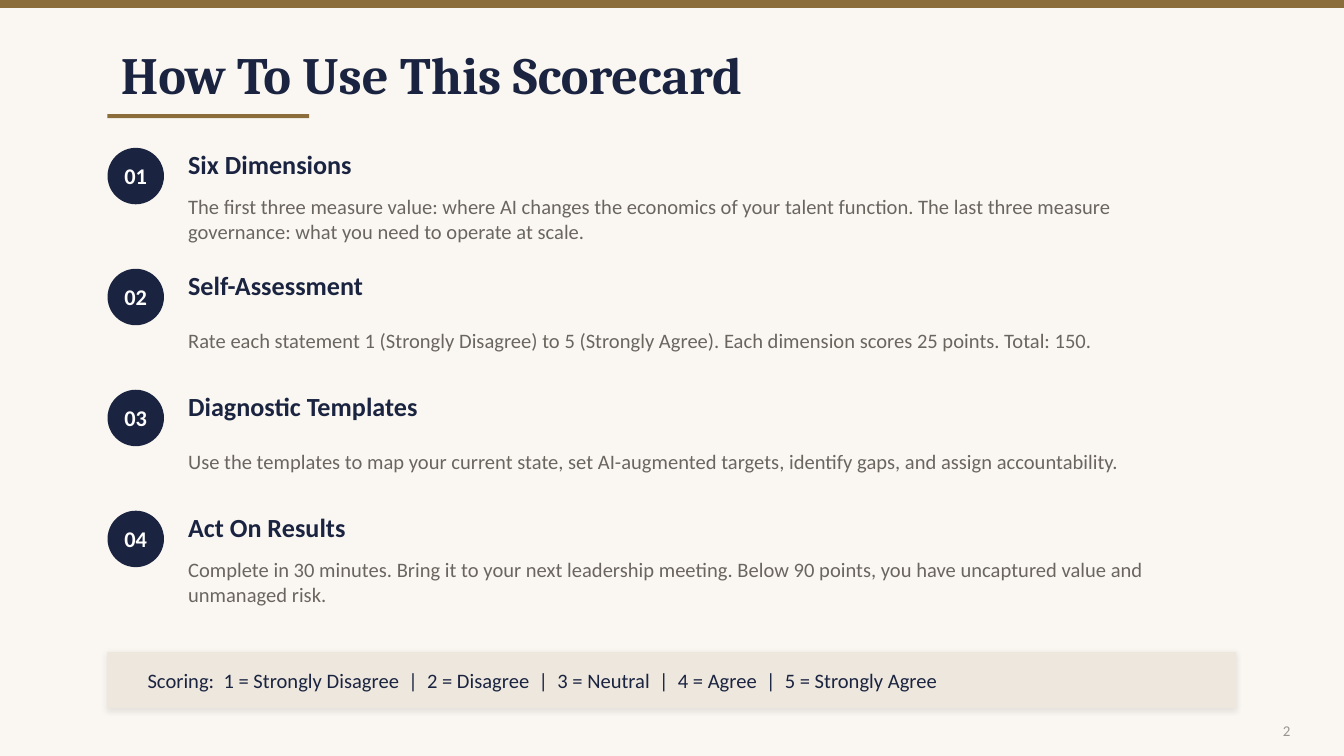
"""Build the scorecard guide slide."""
from dataclasses import dataclass

from lxml import etree
from pptx import Presentation
from pptx.dml.color import RGBColor
from pptx.enum import shapes, text
from pptx.oxml import ns
from pptx import util as u


@dataclass(frozen=True)
class Theme:
    """Colours, fonts and type sizes."""
    paper: str = "FAF7F2"
    gold: str = "8A6D3B"
    navy: str = "1A2340"
    white: str = "FFFFFF"
    grey: str = "6B6560"
    pale: str = "9A9490"
    sand: str = "EDE7DD"
    head: str = "Cambria"
    body: str = "Calibri"
    title: int = 28
    topic: int = 14
    badge: int = 12
    copy: int = 11
    page: int = 8


THEME = Theme()
CELL = 0.1
WIDE, HIGH = 100, 56.25
LEFT, SPAN = 8, 84
TOP, PITCH = 11, 9
DISC = 4.2
STEPS = [
    ("Six Dimensions",
     "The first three measure value: where AI changes the economics of your talent function. "
     "The last three measure governance: what you need to operate at scale."),
    ("Self-Assessment",
     "Rate each statement 1 (Strongly Disagree) to 5 (Strongly Agree). "
     "Each dimension scores 25 points. Total: 150."),
    ("Diagnostic Templates",
     "Use the templates to map your current state, set AI-augmented targets, "
     "identify gaps, and assign accountability."),
    ("Act On Results",
     "Complete in 30 minutes. Bring it to your next leadership meeting. "
     "Below 90 points, you have uncaptured value and unmanaged risk."),
]
SCALE = ["Strongly Disagree", "Disagree", "Neutral", "Agree", "Strongly Agree"]


def grid(*cells):
    """Turn grid cells into slide lengths."""
    return [u.Inches(cell * CELL) for cell in cells]


def write(shape, words, size, tint, bold=False, font=THEME.body, inset=None,
          align=text.PP_ALIGN.LEFT, anchor=text.MSO_ANCHOR.MIDDLE):
    """Set and format the text of a shape."""
    frame = shape.text_frame
    frame.text = words
    frame.word_wrap = True
    frame.auto_size = text.MSO_AUTO_SIZE.NONE
    frame.vertical_anchor = anchor
    if inset is not None:
        frame.margin_left = frame.margin_right = inset
        frame.margin_top = frame.margin_bottom = inset
    para = frame.paragraphs[0]
    para.alignment = align
    for run in para.runs:
        run.font.name = font
        run.font.size = u.Pt(size)
        run.font.bold = bold
        run.font.color.rgb = RGBColor.from_string(tint)


def label(slide, box, words, size, tint, **style):
    """Add a text box."""
    write(slide.shapes.add_textbox(*grid(*box)), words, size, tint, **style)


def block(slide, box, tint, kind=shapes.MSO_SHAPE.RECTANGLE):
    """Add a plain filled shape."""
    shape = slide.shapes.add_shape(kind, *grid(*box))
    shape.shadow.inherit = False
    shape.fill.solid()
    shape.fill.fore_color.rgb = RGBColor.from_string(tint)
    shape.line.fill.background()
    return shape


def shade(shape):
    """Give a shape a soft outer shadow."""
    effects = shape._element.spPr.find(ns.qn("a:effectLst"))
    outer = etree.SubElement(effects, ns.qn("a:outerShdw"), blurRad=str(u.Pt(3)),
                             dist=str(u.Pt(1)), dir=str(135 * 60000),
                             algn="bl", rotWithShape="0")
    tint = etree.SubElement(outer, ns.qn("a:srgbClr"), val="000000")
    etree.SubElement(tint, ns.qn("a:alpha"), val="8000")


def header(slide):
    """Add the top band, the title and its rule."""
    block(slide, (0, 0, WIDE, 0.6), THEME.gold)
    title = slide.shapes.title
    title.left, title.top, title.width, title.height = grid(LEFT, 2.5, 80, 6)
    write(title, "How To Use This Scorecard", THEME.title, THEME.navy,
          bold=True, font=THEME.head)
    block(slide, (LEFT, 8.5, 15, 0.3), THEME.gold)


def step(slide, rank, topic, words):
    """Add one numbered step."""
    row = TOP + (rank - 1) * PITCH
    disc = block(slide, (LEFT, row, DISC, DISC), THEME.navy, shapes.MSO_SHAPE.OVAL)
    write(disc, f"{rank:02d}", THEME.badge, THEME.white, bold=True, inset=0,
          align=text.PP_ALIGN.CENTER)
    label(slide, (14, row - 0.2, 76, 2.8), topic, THEME.topic, THEME.navy,
          bold=True, inset=0)
    label(slide, (14, row + 2.8, 76, 5), words, THEME.copy, THEME.grey, inset=0)


def footer(slide):
    """Add the scoring key and the page number."""
    shade(block(slide, (LEFT, 48.5, SPAN, DISC), THEME.sand))
    key = "  |  ".join(f"{mark} = {name}" for mark, name in enumerate(SCALE, 1))
    label(slide, (10, 48.5, 80, DISC), f"Scoring:  {key}", THEME.copy, THEME.navy)
    label(slide, (92, 52.5, 5, 3), "2", THEME.page, THEME.pale,
          align=text.PP_ALIGN.RIGHT, anchor=text.MSO_ANCHOR.BOTTOM)


def main():
    """Build and save the slide."""
    deck = Presentation()
    deck.slide_width, deck.slide_height = grid(WIDE, HIGH)
    slide = deck.slides.add_slide(deck.slide_layouts.get_by_name("Title Only"))
    slide.background.fill.solid()
    slide.background.fill.fore_color.rgb = RGBColor.from_string(THEME.paper)
    header(slide)
    for rank, (topic, words) in enumerate(STEPS, 1):
        step(slide, rank, topic, words)
    footer(slide)
    deck.save("out.pptx")


if __name__ == "__main__":
    main()
